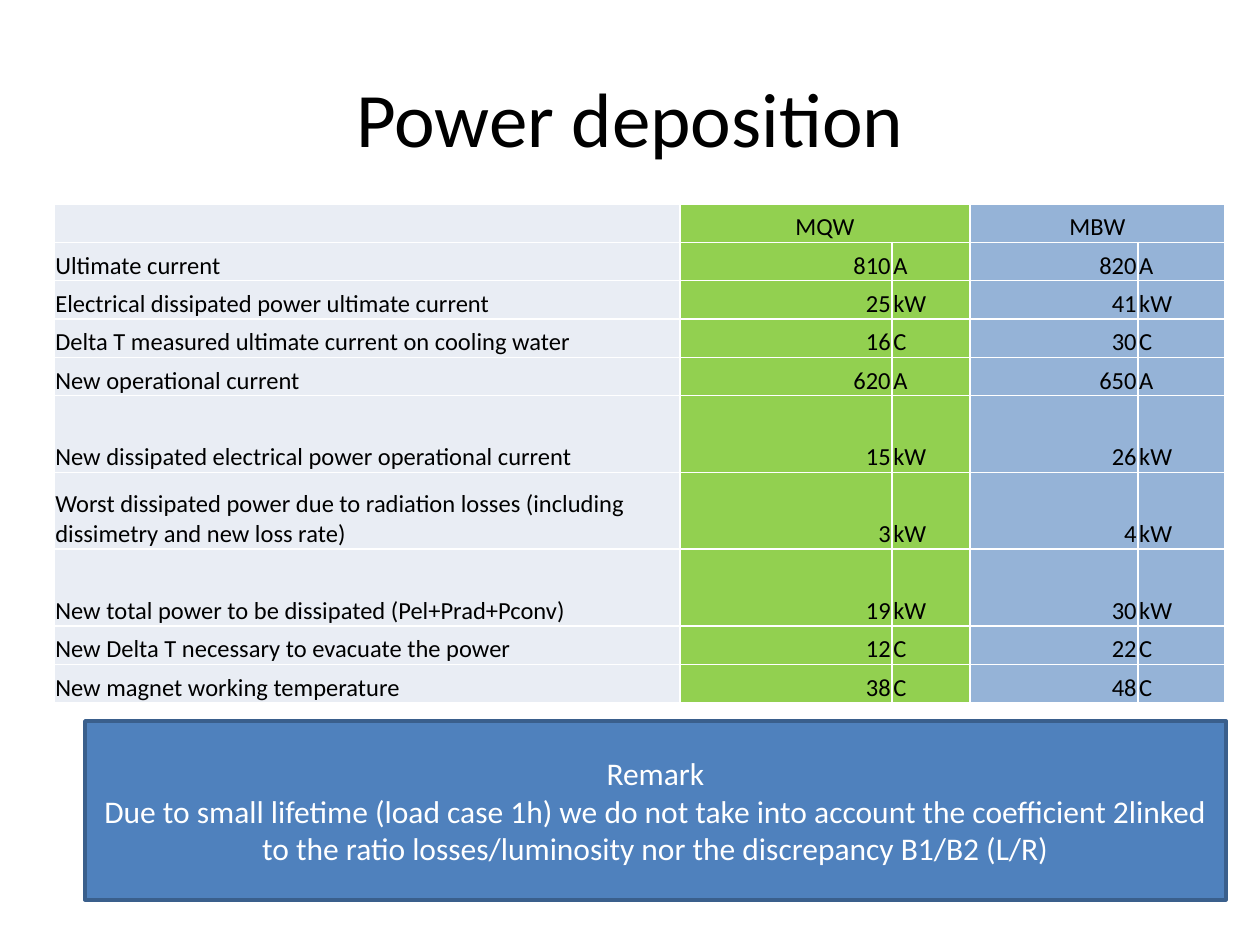
import itertools

import lxml.etree
import pptx
import pptx.dml.color
import pptx.enum.shapes
import pptx.enum.text
import pptx.oxml.ns
import pptx.util

SCALE = 914400 / 126  # EMU in one px
FONT = "Calibri"
CELL_MARGIN = pptx.util.Pt(0.75)
COLORS = {
    "text": "000000",
    "inverse": "FFFFFF",
    "border": "FFFFFF",
    "label": "E9EDF4",
    "mqw": "92D050",
    "mbw": "95B3D7",
    "remark": "4F81BD",
    "remark_line": "3A5F8C",
}
ALIGN = pptx.enum.text.PP_ALIGN
ANCHOR = pptx.enum.text.MSO_ANCHOR

# Label, MQW value, MBW value, unit, height in row units
ROWS = [
    ("Ultimate current", 810, 820, "A", 1),
    ("Electrical dissipated power ultimate current", 25, 41, "kW", 1),
    ("Delta T measured ultimate current on cooling water", 16, 30, "C", 1),
    ("New operational current", 620, 650, "A", 1),
    ("New dissipated electrical power operational current", 15, 26, "kW", 2),
    ("Worst dissipated power due to radiation losses "
     "(including dissimetry and new loss rate)", 3, 4, "kW", 2),
    ("New total power to be dissipated (Pel+Prad+Pconv)", 19, 30, "kW", 2),
    ("New Delta T necessary to evacuate the power", 12, 22, "C", 1),
    ("New magnet working temperature", 38, 48, "C", 1),
]
COLUMN_WIDTHS = [626, 212, 78, 168, 87]
COLUMN_FILLS = ["label", "mqw", "mqw", "mbw", "mbw"]
COLUMN_ALIGNS = [ALIGN.LEFT, ALIGN.RIGHT, ALIGN.LEFT, ALIGN.RIGHT, ALIGN.LEFT]


def px(length):
    return pptx.util.Emu(round(length * SCALE))


def rgb(name):
    return pptx.dml.color.RGBColor.from_string(COLORS[name])


def write(frame, text, size, color="text", align=ALIGN.CENTER):
    """Fill a text frame, one paragraph for each line of the text."""
    frame.word_wrap = True
    for number, line in enumerate(text.split("\n")):
        para = frame.add_paragraph() if number else frame.paragraphs[0]
        para.alignment = align
        span = para.add_run()
        span.text = line
        span.font.name = FONT
        span.font.size = pptx.util.Pt(size)
        span.font.color.rgb = rgb(color)


def add_borders(cell, color, width):
    properties = cell._tc.get_or_add_tcPr()
    for side in ("a:lnL", "a:lnR", "a:lnT", "a:lnB"):
        line = lxml.etree.SubElement(properties, pptx.oxml.ns.qn(side),
                                     w=str(pptx.util.Pt(width)))
        fill = lxml.etree.SubElement(line, pptx.oxml.ns.qn("a:solidFill"))
        lxml.etree.SubElement(fill, pptx.oxml.ns.qn("a:srgbClr"), val=COLORS[color])


def place_title(page, left, top, width, height):
    title = page.shapes.title
    title.left, title.top, title.width, title.height = map(px, (left, top, width, height))
    title.text_frame.vertical_anchor = ANCHOR.MIDDLE
    write(title.text_frame, "Power deposition", 44)


def format_cell(cell, text, fill, align):
    cell.margin_left = cell.margin_top = cell.margin_right = CELL_MARGIN
    cell.margin_bottom = 0
    cell.vertical_anchor = ANCHOR.BOTTOM
    write(cell.text_frame, text, 14, align=align)
    add_borders(cell, "border", 1)
    cell.fill.solid()
    cell.fill.fore_color.rgb = rgb(fill)


def place_power_table(page, left, top, width, height):
    grid = [["", "MQW", "", "MBW", ""]]
    grid += [[label, str(mqw), unit, str(mbw), unit] for label, mqw, mbw, unit, _ in ROWS]
    table = page.shapes.add_table(len(grid), len(COLUMN_WIDTHS),
                                  *map(px, (left, top, width, height))).table
    table.first_row = table.horz_banding = False

    # Column widths, and row heights shared out by row units
    for column, share in zip(table.columns, COLUMN_WIDTHS):
        column.width = px(width * share / sum(COLUMN_WIDTHS))
    units = [1] + [row[-1] for row in ROWS]
    for row, share in zip(table.rows, units):
        row.height = px(height * share / sum(units))

    # Cells, then the headings that span value and unit
    for r, c in itertools.product(range(len(grid)), range(len(COLUMN_WIDTHS))):
        align = COLUMN_ALIGNS[c] if r else ALIGN.CENTER
        format_cell(table.cell(r, c), grid[r][c], COLUMN_FILLS[c], align)
    for c in (1, 3):
        table.cell(0, c).merge(table.cell(0, c + 1))


def place_remark(page, left, top, width, height):
    box = page.shapes.add_shape(pptx.enum.shapes.MSO_SHAPE.RECTANGLE,
                                *map(px, (left, top, width, height)))
    box.shadow.inherit = False
    box.fill.solid()
    box.fill.fore_color.rgb = rgb("remark")
    box.line.color.rgb = rgb("remark_line")
    box.line.width = pptx.util.Pt(2)
    box.text_frame.vertical_anchor = ANCHOR.MIDDLE
    write(box.text_frame,
          "Remark\nDue to small lifetime (load case 1h) we do not take into account "
          "the coefficient 2linked to the ratio losses/luminosity nor the "
          "discrepancy B1/B2 (L/R)", 18, color="inverse")


def main():
    deck = pptx.Presentation()
    deck.slide_width, deck.slide_height = px(1260), px(945)
    page = deck.slides.add_slide(deck.slide_layouts.get_by_name("Title Only"))
    place_title(page, 63, 38, 1134, 157)
    place_power_table(page, 54, 204, 1171, 499)
    place_remark(page, 85, 721, 1141, 179)
    deck.save("out.pptx")


if __name__ == "__main__":
    main()
